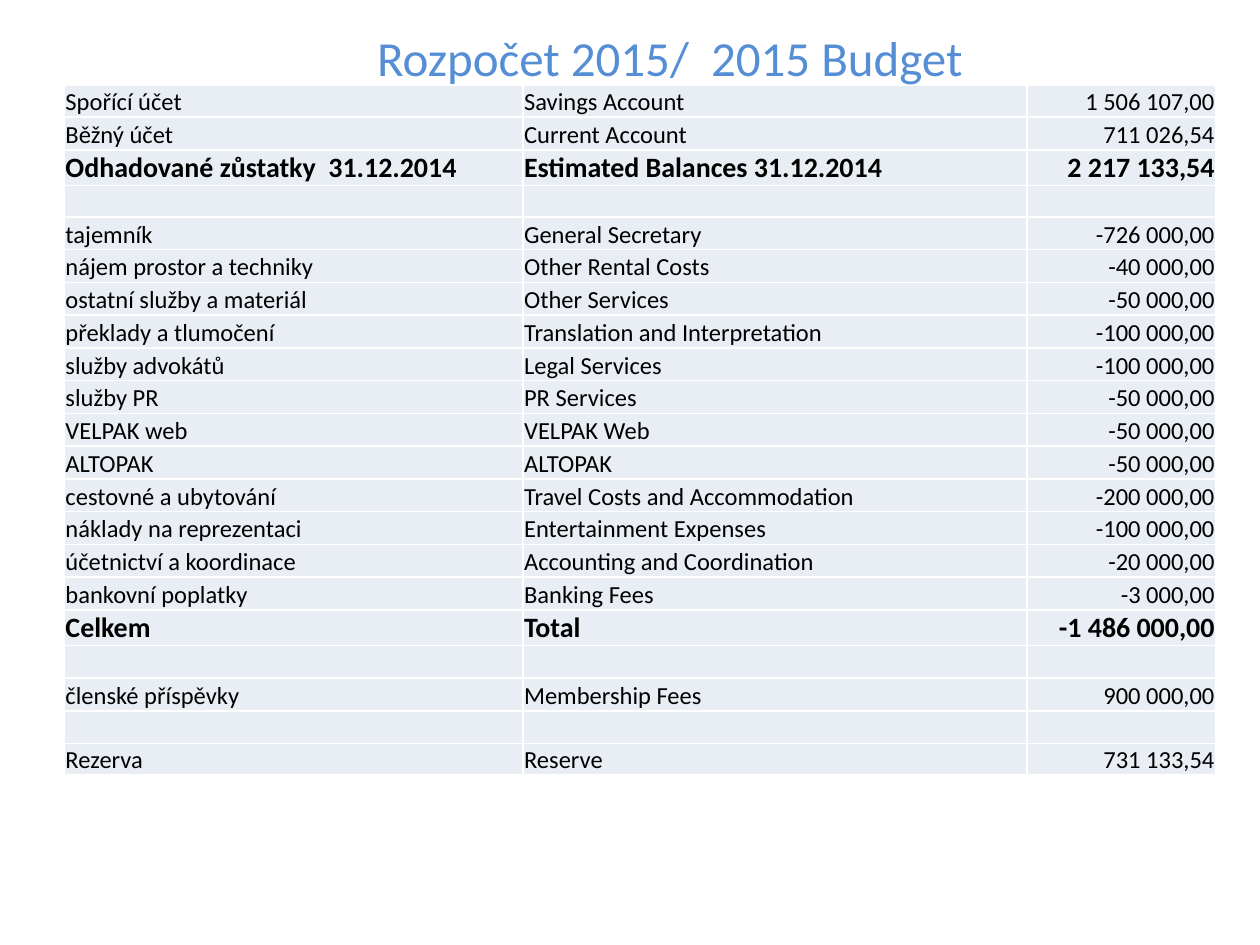
from dataclasses import dataclass

from lxml.etree import SubElement
from pptx import Presentation
from pptx.dml.color import RGBColor as Rgb
from pptx.enum.text import MSO_ANCHOR as Anchor, PP_ALIGN as Align
from pptx.oxml.ns import qn
from pptx.util import Inches, Pt

HEADING = "Rozpočet 2015/  2015 Budget "
BLANK = ("", "", "")
BALANCES = [
    ("Spořící účet", "Savings Account", "1 506 107,00"),
    ("Běžný účet", "Current Account", "711 026,54"),
    ("Odhadované zůstatky  31.12.2014", "Estimated Balances 31.12.2014", "2 217 133,54"),
]
COSTS = [
    ("tajemník", "General Secretary", "-726 000,00"),
    ("nájem prostor a techniky", "Other Rental Costs", "-40 000,00"),
    ("ostatní služby a materiál", "Other Services", "-50 000,00"),
    ("překlady a tlumočení", "Translation and Interpretation", "-100 000,00"),
    ("služby advokátů", "Legal Services", "-100 000,00"),
    ("služby PR", "PR Services", "-50 000,00"),
    ("VELPAK web", "VELPAK Web", "-50 000,00"),
    ("ALTOPAK", "ALTOPAK", "-50 000,00"),
    ("cestovné a ubytování", "Travel Costs and Accommodation", "-200 000,00"),
    ("náklady na reprezentaci", "Entertainment Expenses", "-100 000,00"),
    ("účetnictví a koordinace", "Accounting and Coordination", "-20 000,00"),
    ("bankovní poplatky", "Banking Fees", "-3 000,00"),
    ("Celkem", "Total", "-1 486 000,00"),
]
FEES = [("členské příspěvky", "Membership Fees", "900 000,00")]
RESERVE = [("Rezerva", "Reserve", "731 133,54")]
BUDGET = [*BALANCES, BLANK, *COSTS, BLANK, *FEES, BLANK, *RESERVE]
SUMS = (BALANCES[-1], COSTS[-1])
COLUMNS = ((3.64, Align.LEFT), (4, Align.LEFT), (1.5, Align.RIGHT))
TIGHT_ROWS = (0, len(BALANCES), len(BUDGET) - 1)


@dataclass(frozen=True)
class Theme:
    font: str = "Calibri"
    heading: str = "558ED5"
    text: str = "000000"
    band: str = "E9EDF4"
    rule: str = "FFFFFF"
    heading_size: int = 28
    sum_size: int = 16
    body_size: int = 14


THEME = Theme()


def apply(target, values):
    for key, value in values.items():
        setattr(target, key, value)


def style_font(font, size, color, bold=False):
    apply(font, {"name": THEME.font, "size": Pt(size), "bold": bold})
    font.color.rgb = Rgb.from_string(color)


def add_borders(cell):
    properties = cell._tc.get_or_add_tcPr()
    for side in ("lnL", "lnR", "lnT", "lnB"):
        line = SubElement(properties, qn(f"a:{side}"), w=str(Pt(1)))
        SubElement(SubElement(line, qn("a:solidFill")), qn("a:srgbClr"), val=THEME.rule)


def fill_cell(cell, entry, align, is_sum):
    add_borders(cell)
    cell.fill.solid()
    cell.fill.fore_color.rgb = Rgb.from_string(THEME.band)
    apply(cell, {
        "vertical_anchor": Anchor.BOTTOM, "margin_left": Inches(0.01),
        "margin_right": Inches(0.01), "margin_top": Inches(0.01), "margin_bottom": 0,
    })
    paragraph = cell.text_frame.paragraphs[0]
    paragraph.alignment = align
    if entry:
        run = paragraph.add_run()
        run.text = entry
        size = THEME.sum_size if is_sum else THEME.body_size
        style_font(run.font, size, THEME.text, is_sum)
    else:
        SubElement(paragraph._p, qn("a:endParaRPr"), sz=str(THEME.body_size * 100))


def add_budget(slide):
    width = sum(share for share, _ in COLUMNS)
    budget = slide.shapes.add_table(
        len(BUDGET), len(COLUMNS), Inches(0.51), Inches(0.68), Inches(width), Inches(5.43)
    ).table
    apply(budget, {"first_row": False, "horz_banding": False})
    for column, (share, _) in zip(budget.columns, COLUMNS):
        column.width = Inches(share)
    for index, (row, entries) in enumerate(zip(budget.rows, BUDGET)):
        is_sum = entries in SUMS
        row.height = Inches(0.28 if is_sum else 0.25 if index in TIGHT_ROWS else 0.26)
        for cell, entry, (_, align) in zip(row.cells, entries, COLUMNS):
            fill_cell(cell, entry, align, is_sum)


def add_heading(slide):
    heading = slide.shapes.title
    apply(heading, {
        "left": Inches(1.22), "top": Inches(0.3),
        "width": Inches(8.28), "height": Inches(0.3),
    })
    frame = heading.text_frame
    apply(frame, {"text": HEADING, "vertical_anchor": Anchor.MIDDLE, "word_wrap": True})
    paragraph = frame.paragraphs[0]
    paragraph.alignment = Align.CENTER
    style_font(paragraph.runs[0].font, THEME.heading_size, THEME.heading)
    slide.shapes._spTree.append(heading._element)


def main():
    """Build the bilingual 2015 budget slide."""
    deck = Presentation()
    apply(deck, {"slide_width": Inches(10), "slide_height": Inches(7.5)})
    slide = deck.slides.add_slide(deck.slide_layouts[5])
    add_budget(slide)
    add_heading(slide)
    deck.save("out.pptx")


if __name__ == "__main__":
    main()
